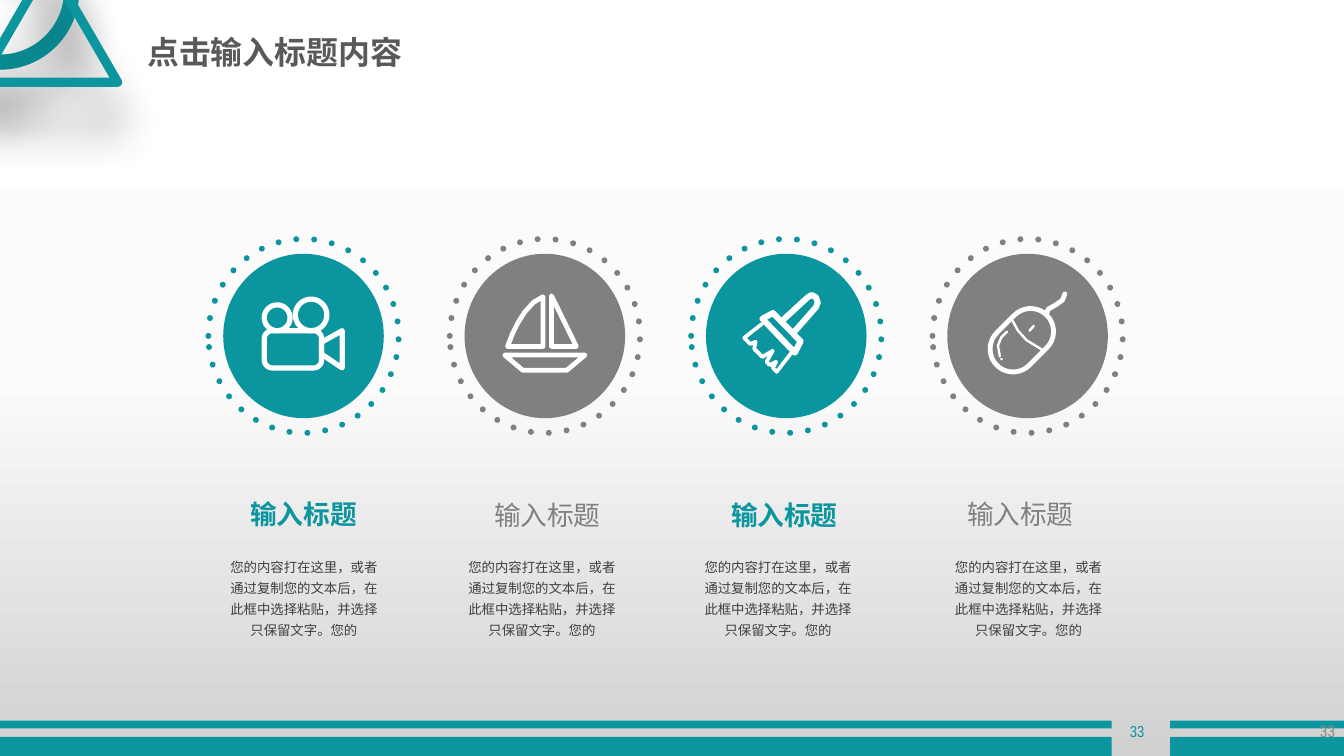
from math import cos, radians, sin

from lxml import etree
from pptx import Presentation
from pptx.dml.color import RGBColor
from pptx.enum.lang import MSO_LANGUAGE_ID
from pptx.enum.shapes import MSO_SHAPE
from pptx.enum.text import MSO_ANCHOR, MSO_AUTO_SIZE, PP_ALIGN
from pptx.oxml import parse_xml
from pptx.oxml.ns import nsdecls, qn
from pptx.util import Inches, Pt
from copy import deepcopy

OVAL, DONUT = MSO_SHAPE.OVAL, MSO_SHAPE.DONUT
TRIANGLE, RECTANGLE = MSO_SHAPE.ISOSCELES_TRIANGLE, MSO_SHAPE.RECTANGLE
LEFT, CENTER, RIGHT = PP_ALIGN.LEFT, PP_ALIGN.CENTER, PP_ALIGN.RIGHT
TOP, MIDDLE = MSO_ANCHOR.TOP, MSO_ANCHOR.MIDDLE
NO_FIT = MSO_AUTO_SIZE.NONE
CHINESE = MSO_LANGUAGE_ID.SIMPLIFIED_CHINESE

TEAL = RGBColor(0x0B, 0x95, 0x9E)
GRAY = RGBColor(0x80, 0x80, 0x80)
WHITE = RGBColor(0xFF, 0xFF, 0xFF)
TITLE_GRAY = RGBColor(0x59, 0x59, 0x59)
BODY_GRAY = RGBColor(0x40, 0x40, 0x40)
NUMBER_GRAY = RGBColor(0x8C, 0x8C, 0x8C)
BACKGROUND = [
    (0, WHITE),
    (0.5, RGBColor(0xFB, 0xFB, 0xFB)),
    (1, RGBColor(0xD1, 0xD1, 0xD1)),
]
CJK_FONT = "Noto Sans CJK SC"
HEADING = "输入标题"
BODY = "您的内容打在这里，或者通过复制您的文本后，在此框中选择粘贴，并选择只保留文字。您的"

BADGE_LEFT, BADGE_STEP, BADGE_TOP = 2.18, 2.525, 2.5
RING_SIZE, DISC_SIZE = (1.99, 2.03), (1.68, 1.72)


def rounded(x, y, width, height, radius, angle=0):
    """Return the closed outline of a rounded rectangle centred on x, y."""
    turn = radians(angle)
    points = []
    for start, side_x, side_y in ((0, 1, 1), (90, -1, 1), (180, -1, -1), (270, 1, -1)):
        for step in range(0, 91, 10):
            arc = radians(start + step)
            across = side_x * (width / 2 - radius) + radius * cos(arc)
            down = side_y * (height / 2 - radius) + radius * sin(arc)
            points.append((x + across * cos(turn) - down * sin(turn),
                           y + across * sin(turn) + down * cos(turn)))
    return points, True


CAMERA = [(3.9, [
    rounded(-27.5, -19, 27, 27, 13.5),
    rounded(8, -22, 33, 33, 16.5),
    rounded(-11, 14, 60, 39, 8.5),
    ([(19, 6.5), (40.5, -5.5), (40.5, 33.5), (19, 19)], True),
])]
BOAT = [(3.6, [
    ([(-39, 11), (-2, 11), (-2, -41), (-12, -35), (-21, -25), (-28, -14), (-34, -2)], True),
    ([(7, 11), (7, -42), (33, 11)], True),
    ([(-42, 20), (42, 20), (23, 36), (-23, 36)], True),
])]
BRUSH = [
    (4.5, [
        ([(-3, -17), (22, -40), (26.5, -43), (31, -40.5), (33, -35), (31, -30), (9, -5)], False),
        ([(-25, -18), (-14, -24), (15, 5.5), (9, 17.5)], True),
    ]),
    (2.8, [
        ([(-25.5, -12.5), (-44, 2), (-37.5, 8.5), (-32, 6), (-33.5, 13.5), (-25, 22),
          (-14, 15.5), (-20.5, 27), (-17.5, 30.5), (-10.5, 27), (-14, 33.5),
          (-10, 37.5), (5.5, 17.5)], False),
    ]),
]
MOUSE = [
    (3.6, [
        rounded(-6, 4.5, 48, 74, 24, 45),
        ([(20, -23.5), (21.5, -28), (29.5, -32.5), (36.5, -37.5), (39, -44)], False),
    ]),
    (1.8, [
        ([(-16, -16.5), (-10, -5.5), (-1, 4.5), (14.5, 14)], False),
        ([(2, -5.5), (6.5, -10.5)], False),
        ([(-21.5, -4.5), (-27.5, 1.5), (-31, 10), (-29, 21.5)], False),
        ([(-27.5, 24), (-27, 24.5)], False),
    ]),
]
COLUMNS = [
    (CAMERA, TEAL, 2.52, 5.16, 2.26),
    (BOAT, GRAY, 5.07, 5.17, 4.75),
    (BRUSH, TEAL, 7.55, 5.17, 7.22),
    (MOUSE, GRAY, 10.02, 5.16, 9.84),
]


def paint_background(page):
    """Fill the page with a three-stop vertical gradient."""
    fill = page.background.fill
    fill.gradient()
    fill.gradient_angle = 270
    stop_list = page.element.find(".//" + qn("a:gsLst"))
    stop_list.append(deepcopy(stop_list[-1]))
    for stop, (position, color) in zip(fill.gradient_stops, BACKGROUND):
        stop.position = position
        stop.color.rgb = color


def add_figure(shapes, kind, left, top, width, height, fill=None, line=None, weight=0):
    """Add a flat preset shape with an optional fill and line."""
    figure = shapes.add_shape(kind, Inches(left), Inches(top), Inches(width), Inches(height))
    figure.shadow.inherit = False
    style_figure(figure, fill, line, weight)
    return figure


def style_figure(figure, fill, line, weight):
    """Set or clear the fill and line of a shape."""
    for target, color in ((figure.fill, fill), (figure.line.fill, line)):
        if color is None:
            target.background()
        else:
            target.solid()
            target.fore_color.rgb = color
    if line is not None:
        figure.line.width = Pt(weight)


def add_drop_shadow(figure):
    """Give a shape a soft shadow falling downward."""
    effects = figure.element.spPr.find(qn("a:effectLst"))
    effects.append(parse_xml(
        f'<a:outerShdw {nsdecls("a")} blurRad="{Pt(33)}" dist="{Pt(33)}" dir="5400000" '
        'algn="t" rotWithShape="0"><a:srgbClr val="000000"><a:alpha val="43000"/>'
        '</a:srgbClr></a:outerShdw>'))


def round_line(figure, dotted=False):
    """Round the caps and joins of a line and optionally break it into dots."""
    line = figure.line._get_or_add_ln()
    line.set("cap", "rnd")
    if dotted:
        dashes = etree.SubElement(line, qn("a:custDash"))
        etree.SubElement(dashes, qn("a:ds"), d="100000", sp="200000")
    etree.SubElement(line, qn("a:round"))


def add_strokes(shapes, center_x, center_y, weight, strokes):
    """Draw white strokes given in hundredths of an inch around a centre."""
    builder = None
    for points, closed in strokes:
        places = [(Inches(center_x + x / 100), Inches(center_y + y / 100)) for x, y in points]
        if builder is None:
            builder = shapes.build_freeform(*places[0])
        else:
            builder.move_to(*places[0])
        builder.add_line_segments(places[1:], close=closed)
    drawing = builder.convert_to_shape()
    drawing.shadow.inherit = False
    style_figure(drawing, None, WHITE, weight)
    round_line(drawing)


def add_badge(page, left, color, icon):
    """Add a dotted ring, a disc and its icon as one group."""
    shapes = page.shapes.add_group_shape().shapes
    center_x = left + RING_SIZE[0] / 2
    center_y = BADGE_TOP + RING_SIZE[1] / 2
    ring = add_figure(shapes, OVAL, left, BADGE_TOP, *RING_SIZE, line=color, weight=4.5)
    round_line(ring, dotted=True)
    width, height = DISC_SIZE
    add_figure(shapes, OVAL, center_x - width / 2, center_y - height / 2, width, height, color)
    for weight, strokes in icon:
        add_strokes(shapes, center_x, center_y, weight, strokes)


def write(box, text, size, font, color, bold=False, align=LEFT, anchor=TOP, wrap=True):
    """Put one formatted paragraph into a text shape and return it."""
    frame = box.text_frame
    frame.text = text
    frame.word_wrap = wrap
    frame.auto_size = NO_FIT
    frame.vertical_anchor = anchor
    para = frame.paragraphs[0]
    para.alignment = align
    span = para.runs[0]
    span.font.size, span.font.bold, span.font.name = Pt(size), bold, font
    span.font.color.rgb = color
    span.font.language_id = CHINESE
    etree.SubElement(span.font._element, qn("a:ea"), typeface=font)
    return para


def add_text(page, left, top, width, height, *content, **options):
    """Add a text box and return its paragraph."""
    box = page.shapes.add_textbox(Inches(left), Inches(top), Inches(width), Inches(height))
    return write(box, *content, **options)


def add_frame(page):
    """Add the corner ornament, the footer bars and the page numbers."""
    donut = add_figure(page.shapes, DONUT, -0.83, -0.93, 1.66, 1.66, TEAL)
    donut.adjustments[0] = 0.096
    triangle = add_figure(page.shapes, TRIANGLE, -0.21, -0.38, 1.44, 1.24, line=TEAL, weight=7)
    for ornament in (donut, triangle):
        add_drop_shadow(ornament)
    for left, width in ((0, 11.63), (12.24, 1.83)):
        for top, height in ((7.71, 0.2), (7.54, 0.08)):
            add_figure(page.shapes, RECTANGLE, left, top, width, height, TEAL)
    add_text(page, 11.64, 7.41, 0.51, 0.48, "33", 12, "Arial Narrow", TEAL,
             align=CENTER, anchor=MIDDLE)
    add_text(page, 13.56, 7.41, 0.51, 0.48, "33", 12, "Roboto Condensed", NUMBER_GRAY,
             align=RIGHT, anchor=MIDDLE)


def add_title(page):
    """Move and format the title placeholder."""
    title = page.shapes.title
    title.left, title.top = Inches(1.44), Inches(0.35)
    title.width, title.height = Inches(3.86), Inches(0.45)
    para = write(title, "点击输入标题内容", 24, CJK_FONT, TITLE_GRAY, bold=True, anchor=MIDDLE)
    para.line_spacing, para.space_before = 0.8, Pt(10)


def main():
    """Build the slide and save the deck."""
    deck = Presentation()
    deck.slide_width, deck.slide_height = Inches(14.06), Inches(7.91)
    page = deck.slides.add_slide(deck.slide_layouts[5])
    paint_background(page)
    add_frame(page)
    add_title(page)
    for index, (icon, color, heading_left, heading_top, body_left) in enumerate(COLUMNS):
        add_badge(page, BADGE_LEFT + index * BADGE_STEP, color, icon)
        add_text(page, heading_left, heading_top, 1.33, 0.44, HEADING, 20.1, "Arial", color,
                 bold=color == TEAL, wrap=False)
        body = add_text(page, body_left, 5.75, 1.84, 0.98, BODY, 10.1, CJK_FONT, BODY_GRAY,
                        align=CENTER)
        body.line_spacing = 1.3
    deck.save("out.pptx")


if __name__ == "__main__":
    main()
